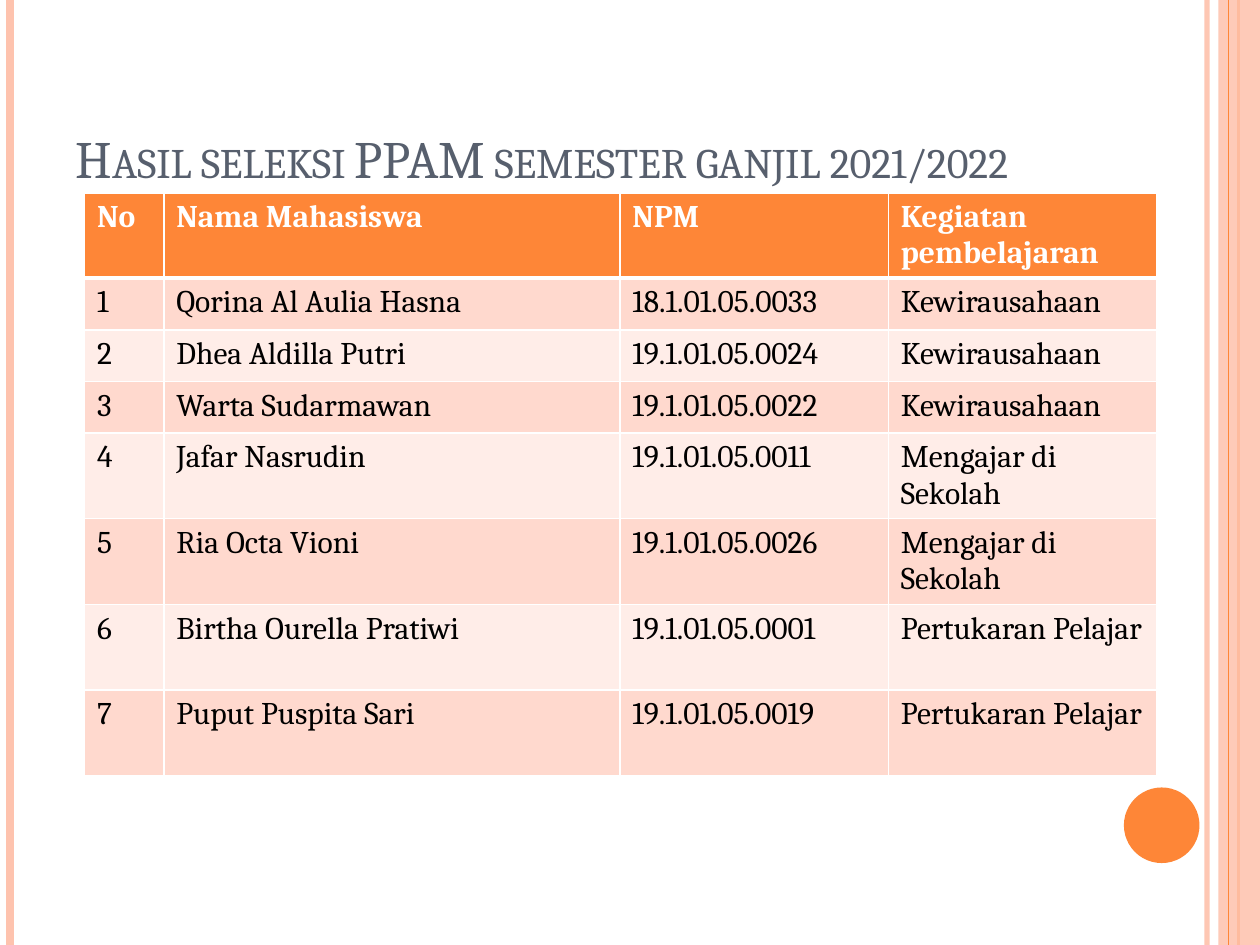
from lxml import etree
from pptx import Presentation
from pptx.dml.color import RGBColor
from pptx.enum.shapes import MSO_CONNECTOR, MSO_SHAPE
from pptx.enum.text import MSO_ANCHOR, MSO_AUTO_SIZE, PP_ALIGN
from pptx.oxml.ns import qn
from pptx.util import Inches, Pt

LINE = MSO_CONNECTOR.STRAIGHT
RECT, OVAL = MSO_SHAPE.RECTANGLE, MSO_SHAPE.OVAL
LEFT, BOTTOM = PP_ALIGN.LEFT, MSO_ANCHOR.BOTTOM
NO_FIT = MSO_AUTO_SIZE.NONE

ORANGE = RGBColor(0xFE, 0x86, 0x37)
PEACH = RGBColor(0xFE, 0xC3, 0xAE)
DARK = RGBColor(0xFF, 0xD9, 0xCE)
LIGHT = RGBColor(0xFF, 0xED, 0xE8)
SLATE = RGBColor(0x57, 0x5F, 0x6D)
WHITE = RGBColor(0xFF, 0xFF, 0xFF)
BLACK = RGBColor(0, 0, 0)

FONT = "Cambria"
WIDE, HIGH = 10, 7.5
COLS = [0.63, 3.62, 2.13, 2.13]
ROWS = [0.67] + [0.41] * 3 + [0.68] * 4
HEAD = ["No", "Nama Mahasiswa", "NPM", "Kegiatan pembelajaran"]
NAMES = [
    ("Qorina Al Aulia Hasna", "18.1.01.05.0033", "Kewirausahaan"),
    ("Dhea Aldilla Putri", "19.1.01.05.0024", "Kewirausahaan"),
    ("Warta Sudarmawan", "19.1.01.05.0022", "Kewirausahaan"),
    ("Jafar Nasrudin", "19.1.01.05.0011", "Mengajar di Sekolah"),
    ("Ria Octa Vioni", "19.1.01.05.0026", "Mengajar di Sekolah"),
    ("Birtha Ourella Pratiwi", "19.1.01.05.0001", "Pertukaran Pelajar"),
    ("Puput Puspita Sari", "19.1.01.05.0019", "Pertukaran Pelajar"),
]


def write(frame, text, size=18, color=BLACK, bold=False, caps=False):
    par = frame.paragraphs[0]
    par.alignment = LEFT
    run = par.add_run()
    run.text = text
    font = run.font
    font.name, font.size, font.bold = FONT, Pt(size), bold
    font.color.rgb = color
    if caps:
        run._r.get_or_add_rPr().set("cap", "small")


def fade(shape, share):
    """Set the opacity, in percent, of the shape's first colour."""
    tone = next(shape._element.spPr.iter(qn("a:srgbClr")))
    etree.SubElement(tone, qn("a:alpha")).set("val", str(share * 1000))


def add_rule(slide, left, color, width, share=100):
    """Draw a vertical line over the whole height of the slide."""
    x = Inches(left)
    rule = slide.shapes.add_connector(LINE, x, 0, x, Inches(HIGH))
    rule.line.color.rgb = color
    rule.line.width = Pt(width)
    etree.SubElement(rule._element.spPr, qn("a:effectLst"))
    if share < 100:
        fade(rule, share)


def add_block(slide, kind, box, color):
    block = slide.shapes.add_shape(kind, *map(Inches, box))
    block.shadow.inherit = False
    block.fill.solid()
    block.fill.fore_color.rgb = color
    block.line.fill.background()
    return block


def add_frame(slide):
    """Draw the stripes at both edges and the disc."""
    add_rule(slide, 9.58, PEACH, 3, share=93)
    add_rule(slide, 0.08, PEACH, 4.5)
    add_rule(slide, 9.83, ORANGE, 1.5)
    band = add_block(slide, RECT, (9.67, 0, WIDE - 9.67, HIGH), PEACH)
    fade(band, 87)
    add_rule(slide, 9.75, ORANGE, 0.75)
    add_block(slide, OVAL, (8.92, 6.25, 0.6, 0.6), ORANGE)


def set_title(slide, text):
    title = slide.shapes.title
    title.left, title.top = Inches(0.5), Inches(0.3)
    title.width, title.height = Inches(8.17), Inches(1.25)
    frame = title.text_frame
    frame.auto_size, frame.vertical_anchor = NO_FIT, BOTTOM
    write(frame, text, size=30, color=SLATE, caps=True)


def paint_cell(cell, color, widths):
    """Give the cell white borders (left, right, top, bottom) and a fill."""
    props = cell._tc.get_or_add_tcPr()
    for side, width in zip("LRTB", widths):
        edge = etree.SubElement(props, qn(f"a:ln{side}"), w=str(Pt(width)))
        fill = etree.SubElement(edge, qn("a:solidFill"))
        etree.SubElement(fill, qn("a:srgbClr"), val=str(WHITE))
    cell.fill.solid()
    cell.fill.fore_color.rgb = color


def add_grid(slide):
    data = [HEAD] + [(str(n), *row) for n, row in enumerate(NAMES, 1)]
    box = (0.67, 1.53, sum(COLS), sum(ROWS))
    grid = slide.shapes.add_table(
        len(ROWS), len(COLS), *map(Inches, box)).table
    for col, width in zip(grid.columns, COLS):
        col.width = Inches(width)
    for r, (row, high) in enumerate(zip(grid.rows, ROWS)):
        row.height = Inches(high)
        top = r == 0
        fill = ORANGE if top else DARK if r % 2 else LIGHT
        edges = (1, 1, 3 if r == 1 else 1, 3 if top else 1)
        for cell, text in zip(row.cells, data[r]):
            paint_cell(cell, fill, edges)
            write(cell.text_frame, text, bold=top,
                  color=WHITE if top else BLACK)


def main():
    deck = Presentation()
    deck.slide_width, deck.slide_height = Inches(WIDE), Inches(HIGH)
    slide = deck.slides.add_slide(deck.slide_layouts.get_by_name("Title Only"))
    add_frame(slide)
    set_title(slide, "Hasil seleksi PPAM semester ganjil 2021/2022")
    add_grid(slide)
    deck.save("out.pptx")


if __name__ == "__main__":
    main()
